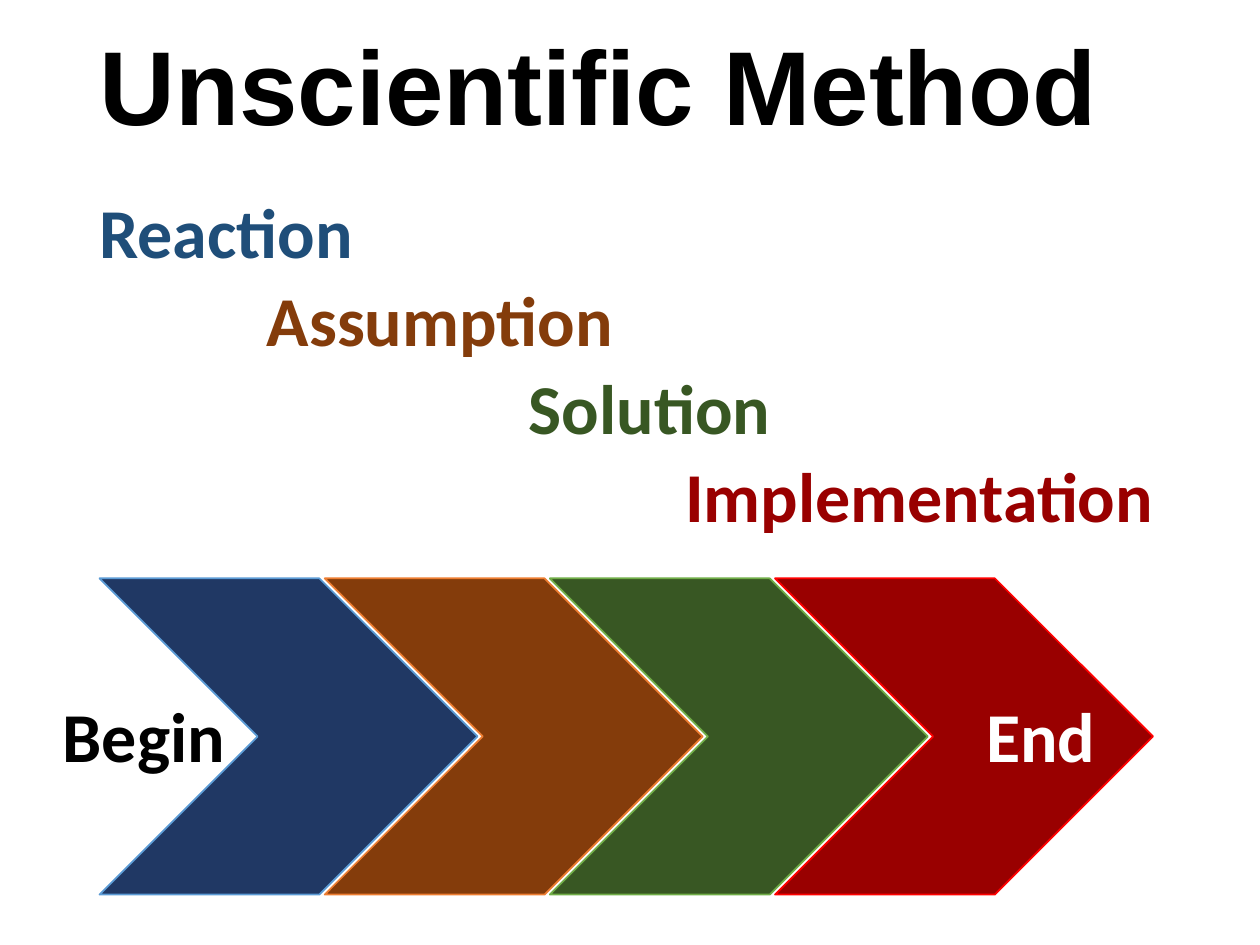
from dataclasses import dataclass

from pptx import Presentation
from pptx.dml.color import RGBColor
from pptx.enum.shapes import MSO_SHAPE
from pptx.enum.text import MSO_ANCHOR, MSO_AUTO_SIZE
from pptx.util import Inches, Pt


@dataclass(frozen=True)
class Theme:
    black: str = "000000"
    white: str = "FFFFFF"
    blue_text: str = "1F4E79"
    blue: str = "203864"
    blue_line: str = "5B9BD5"
    brown: str = "843C0B"
    orange_line: str = "ED7D31"
    green: str = "385723"
    green_line: str = "70AD47"
    red: str = "990000"
    red_line: str = "FF0000"
    title_font: str = "Arial"
    body_font: str = "Calibri"
    title_size: int = 60
    label_size: int = 40


theme = Theme()

prs = Presentation()
prs.slide_width, prs.slide_height = Inches(10), Inches(7.5)
s = prs.slides.add_slide(prs.slide_layouts[6])


def add_text(text, *, left, top, width, height=0.77, color=theme.black,
             font=theme.body_font, size=theme.label_size, wrap=False,
             anchor=MSO_ANCHOR.TOP, line_spacing=1.0):
    box = s.shapes.add_textbox(Inches(left), Inches(top), Inches(width), Inches(height))
    tf = box.text_frame
    tf.word_wrap = wrap
    tf.auto_size = MSO_AUTO_SIZE.NONE if wrap else MSO_AUTO_SIZE.SHAPE_TO_FIT_TEXT
    tf.vertical_anchor = anchor
    p = tf.paragraphs[0]
    p.line_spacing = line_spacing
    r = p.add_run()
    r.text = text
    r.font.name, r.font.size, r.font.bold = font, Pt(size), True
    r.font.color.rgb = RGBColor.from_string(color)


# Title
add_text("Unscientific Method", left=0.69, top=0, width=8.62, height=1.45,
         font=theme.title_font, size=theme.title_size, wrap=True,
         anchor=MSO_ANCHOR.MIDDLE, line_spacing=0.9)

# Chevron process, evenly spaced
chevrons = [
    (theme.blue, theme.blue_line),
    (theme.brown, theme.orange_line),
    (theme.green, theme.green_line),
    (theme.red, theme.red_line),
]
for i, (fill, line) in enumerate(chevrons):
    sp = s.shapes.add_shape(MSO_SHAPE.CHEVRON, Inches(0.79 + i * 1.787), Inches(4.59),
                            Inches(3), Inches(2.51))
    sp.shadow.inherit = False
    sp.fill.solid()
    sp.fill.fore_color.rgb = RGBColor.from_string(fill)
    sp.line.color.rgb = RGBColor.from_string(line)
    sp.line.width = Pt(1)

# Step names, descending like a staircase
steps = [
    ("Reaction", 0.69, 2.24, theme.blue_text),
    ("Assumption", 2.02, 2.98, theme.brown),
    ("Solution", 4.1, 2.14, theme.green),
    ("Implementation", 5.34, 3.96, theme.red),
]
for i, (name, left, width, color) in enumerate(steps):
    add_text(name, left=left, top=1.45 + i * 0.697, width=width, color=color)

# Start and finish labels
add_text("Begin", left=0.4, top=5.45, width=1.5)
add_text("End", left=7.73, top=5.45, width=1.08, color=theme.white)

prs.save("out.pptx")
